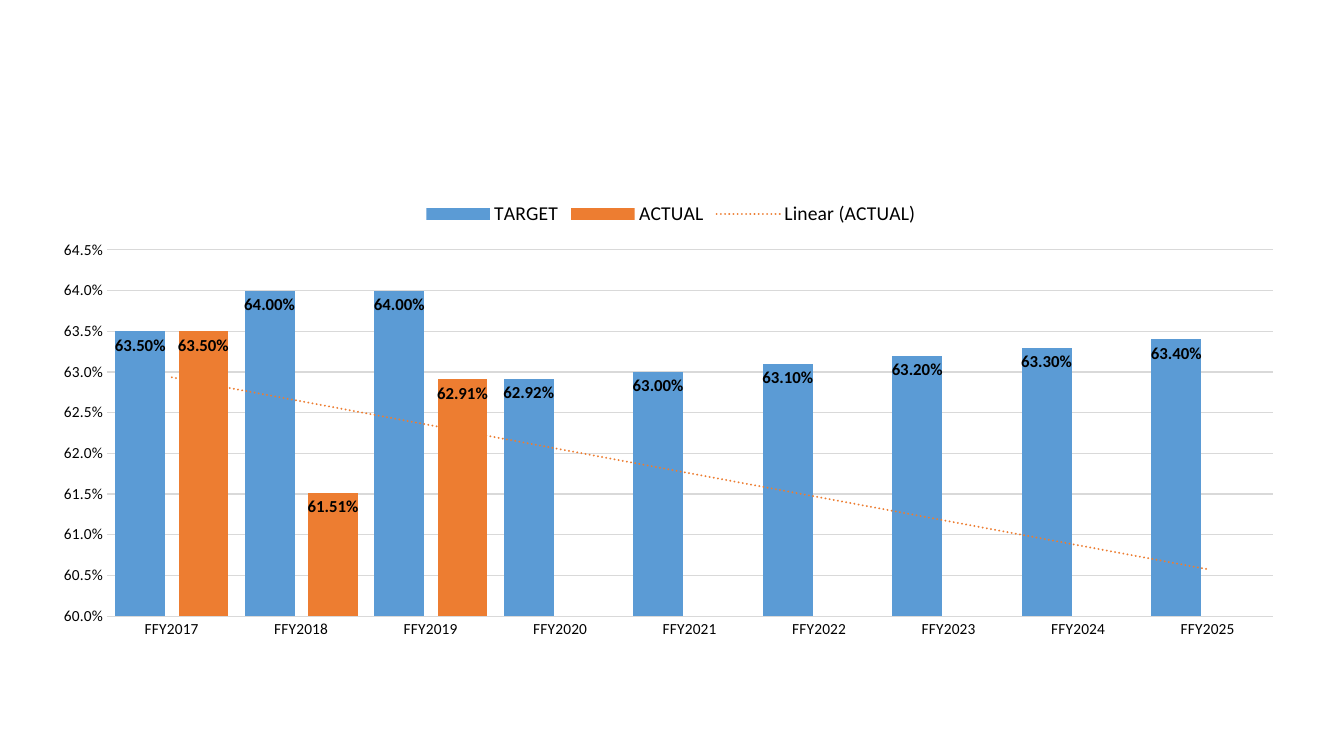
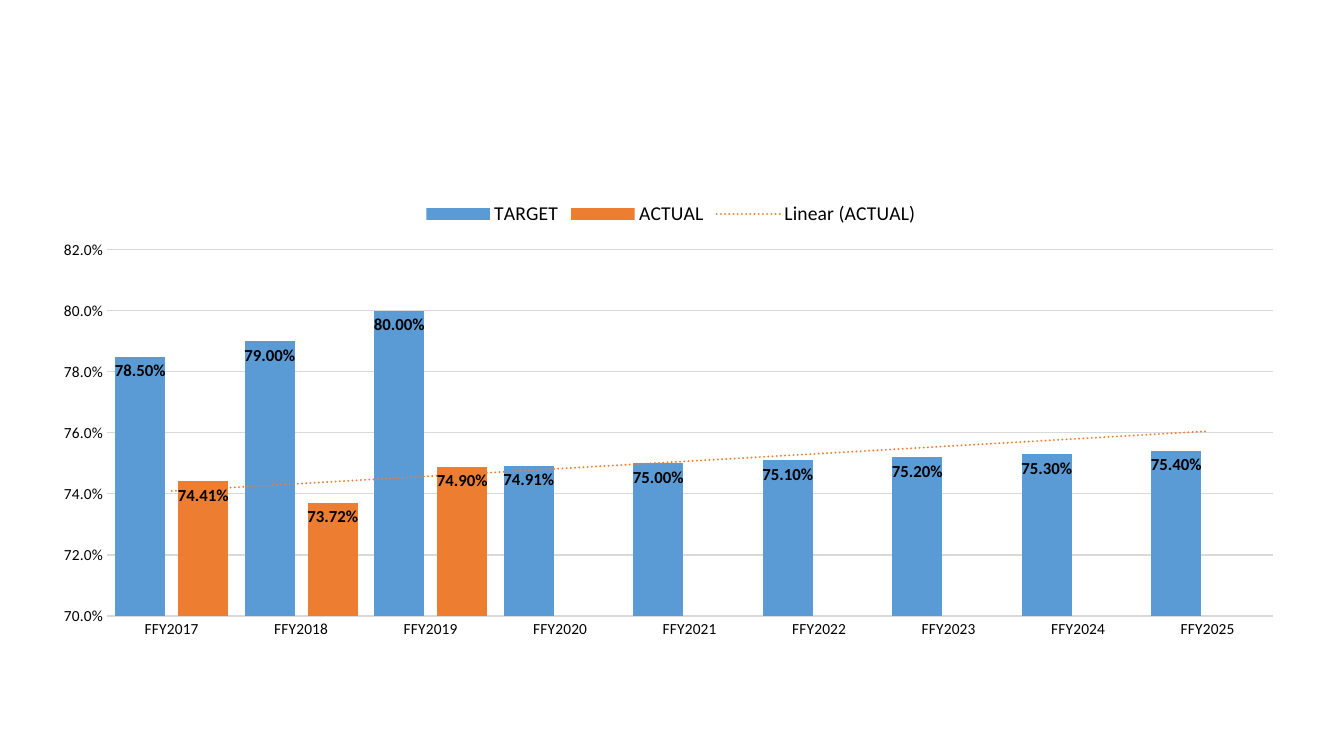
from lxml import etree
from pptx import Presentation
from pptx.chart.data import CategoryChartData
from pptx.dml.color import RGBColor
from pptx.enum.chart import (XL_CHART_TYPE, XL_LABEL_POSITION,
                             XL_LEGEND_POSITION, XL_TICK_MARK)
from pptx.oxml import parse_xml
from pptx.oxml.ns import nsdecls, qn
from pptx.util import Inches, Pt

CLUSTERED = XL_CHART_TYPE.COLUMN_CLUSTERED
INSIDE_END = XL_LABEL_POSITION.INSIDE_END
LEGEND_TOP = XL_LEGEND_POSITION.TOP
NO_TICK = XL_TICK_MARK.NONE

BLUE = RGBColor(0x5B, 0x9B, 0xD5)
ORANGE = RGBColor(0xED, 0x7D, 0x31)
GRAY = RGBColor(0xD9, 0xD9, 0xD9)
BLACK = RGBColor(0, 0, 0)

YEARS = [f"FFY{year}" for year in range(2017, 2026)]
INDICATORS = [
    {"target": [0.635, 0.64, 0.64, 0.6292, 0.63, 0.631, 0.632, 0.633, 0.634],
     "actual": [0.635, 0.6151, 0.6291],
     "scale": {"minimum_scale": 0.6, "maximum_scale": 0.645, "major_unit": 0.005},
     "gap": 33},
    {"target": [0.785, 0.79, 0.8, 0.7491, 0.75, 0.751, 0.752, 0.753, 0.754],
     "actual": [0.7441, 0.7372, 0.749],
     "scale": {"minimum_scale": 0.7, "maximum_scale": 0.82, "major_unit": 0.02},
     "gap": 34},
]


def apply(target, values):
    for name, value in values.items():
        setattr(target, name, value)


class Deck:
    """Holds the shared style and the current slide."""
    font_name = "Calibri"
    frame = [Inches(v) for v in (0.44, 1.89, 12.43, 4.54)]
    plot_area = {"x": 0.05, "y": 0.13, "w": 0.93, "h": 0.8}

    def __init__(self):
        self.prs = Presentation()
        apply(self.prs, {"slide_width": Inches(13.33), "slide_height": Inches(7.5)})
        self.slide = None

    def new_slide(self):
        self.slide = self.prs.slides.add_slide(self.prs.slide_layouts[6])

    def style_font(self, font, size, bold=False):
        apply(font, {"name": self.font_name, "size": Pt(size), "bold": bold})
        font.color.rgb = BLACK

    def style_line(self, line):
        line.color.rgb = GRAY
        line.width = Pt(0.75)

    def column_chart(self, target, actual, scale, gap):
        data = CategoryChartData(number_format="0.00%")
        data.categories = YEARS
        data.add_series("TARGET", target)
        data.add_series("ACTUAL", actual + [None] * (len(YEARS) - len(actual)))
        chart = self.slide.shapes.add_chart(CLUSTERED, *self.frame, data).chart
        chart.has_title = False
        self.style_font(chart.font, 10)

        # Columns
        plot = chart.plots[0]
        apply(plot, {"gap_width": gap, "overlap": -27, "vary_by_categories": False})
        for series, color in zip(plot.series, (BLUE, ORANGE)):
            series.format.fill.solid()
            series.format.fill.fore_color.rgb = color
            series.invert_if_negative = False
            self.value_labels(series.data_labels)
        self.trend_line(plot.series[1], ORANGE)

        # Axes and legend
        self.axes(chart, scale)
        chart.has_legend = True
        apply(chart.legend, {"position": LEGEND_TOP, "include_in_layout": False})
        self.style_font(chart.legend.font, 14)
        self.place_plot(chart)

    def value_labels(self, labels):
        apply(labels, {"show_value": True, "position": INSIDE_END,
                       "number_format": "0.00%", "number_format_is_linked": False})
        self.style_font(labels.font, 12, bold=True)

    def axes(self, chart, scale):
        years, rates = chart.category_axis, chart.value_axis
        for axis in (years, rates):
            apply(axis, {"major_tick_mark": NO_TICK, "minor_tick_mark": NO_TICK})
            self.style_font(axis.tick_labels.font, 11)
        self.style_line(years.format.line)
        apply(rates, scale)
        apply(rates.tick_labels, {"number_format": "0.0%",
                                  "number_format_is_linked": False})
        rates.format.line.fill.background()
        rates.has_major_gridlines = True
        self.style_line(rates.major_gridlines.format.line)

    def trend_line(self, series, color):
        trend = parse_xml(
            f'<c:trendline {nsdecls("c", "a")}><c:spPr>'
            f'<a:ln w="{Pt(1.5)}" cap="rnd"><a:solidFill><a:srgbClr val="{color}"/>'
            '</a:solidFill><a:prstDash val="sysDot"/></a:ln></c:spPr>'
            '<c:trendlineType val="linear"/><c:dispRSqr val="0"/>'
            '<c:dispEq val="0"/></c:trendline>')
        series._element.find(qn("c:cat")).addprevious(trend)

    def place_plot(self, chart):
        area = chart._chartSpace.find(f'{qn("c:chart")}/{qn("c:plotArea")}')
        for old in area.findall(qn("c:layout")):
            area.remove(old)
        layout = parse_xml(f'<c:layout {nsdecls("c")}><c:manualLayout/></c:layout>')
        values = {"layoutTarget": "inner", "xMode": "edge", "yMode": "edge",
                  **self.plot_area}
        for tag, value in values.items():
            etree.SubElement(layout[0], qn(f"c:{tag}")).set("val", str(value))
        area.insert(0, layout)


def main():
    deck = Deck()
    for indicator in INDICATORS:
        deck.new_slide()
        deck.column_chart(**indicator)
    deck.prs.save("out.pptx")


if __name__ == "__main__":
    main()
